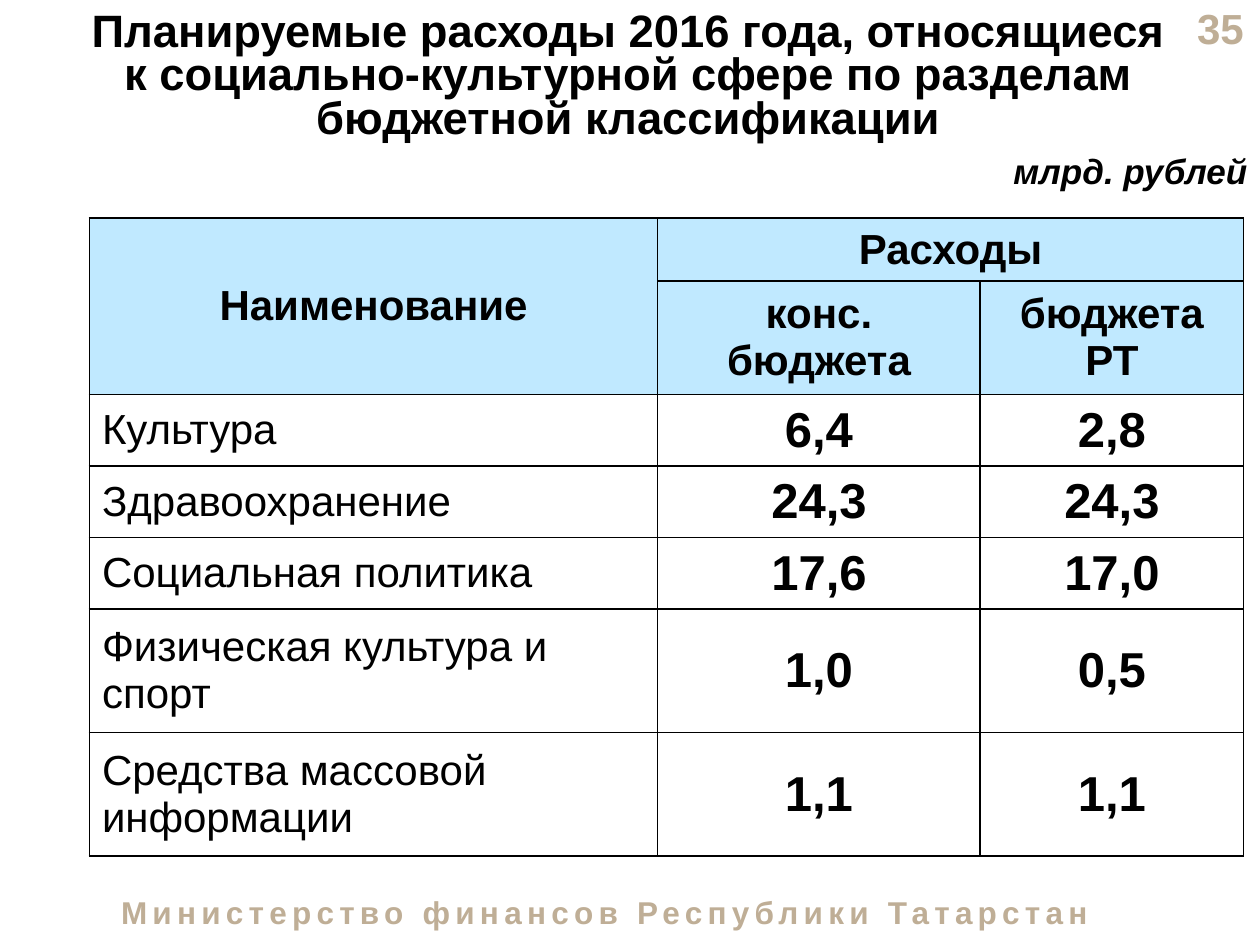
from lxml import etree
from pptx import Presentation
from pptx.dml.color import RGBColor
from pptx.enum.text import MSO_ANCHOR, PP_ALIGN
from pptx.oxml.ns import qn
from pptx.util import Inches, Pt

LEFT, CENTER, RIGHT = PP_ALIGN.LEFT, PP_ALIGN.CENTER, PP_ALIGN.RIGHT
TOP, MIDDLE = MSO_ANCHOR.TOP, MSO_ANCHOR.MIDDLE
BLACK, BEIGE, HEADER_BLUE = "000000", "BFAE96", "C0E9FF"


def write(paragraph, text, size, color=BLACK, bold=True, align=CENTER):
    paragraph.alignment = align
    run = paragraph.add_run()
    run.text = text
    run.font.name = "Arial"
    run.font.size = Pt(size)
    run.font.bold = bold
    run.font.color.rgb = RGBColor.from_string(color)
    return run


def add_text(left, top, width, height, text, size, color, align, anchor=TOP, wrap=True):
    """Add a one-paragraph text box and return its paragraph and run."""
    box = slide.shapes.add_textbox(Inches(left), Inches(top), Inches(width), Inches(height))
    box.text_frame.word_wrap = wrap
    box.text_frame.vertical_anchor = anchor
    paragraph = box.text_frame.paragraphs[0]
    return paragraph, write(paragraph, text, size, color, align=align)


presentation = Presentation()
presentation.slide_width = Inches(10)
presentation.slide_height = Inches(7.5)
slide = presentation.slides.add_slide(presentation.slide_layouts[6])

# Page number and footer
add_text(9.33, 0.05, 0.64, 0.34, "35", 24, BEIGE, RIGHT, MIDDLE)
_, footer_run = add_text(0.56, 7.04, 8.48, 0.4, "Министерство финансов Республики Татарстан",
                         18, BEIGE, CENTER)
footer_run.font._element.set("spc", "300")

# Title
title, _ = add_text(
    0.56, 0.05, 8.85, 1.19,
    "Планируемые расходы 2016 года, относящиеся к социально-культурной сфере "
    "по разделам бюджетной классификации", 25.9, BLACK, CENTER)
title.line_spacing = 0.8

# Spending table
rows = [
    ("Наименование", "Расходы", ""),
    ("", "конс. бюджета", "бюджета РТ"),
    ("Культура", "6,4", "2,8"),
    ("Здравоохранение", "24,3", "24,3"),
    ("Социальная политика", "17,6", "17,0"),
    ("Физическая культура и спорт", "1,0", "0,5"),
    ("Средства массовой информации", "1,1", "1,1"),
]
column_widths = [4.51, 2.56, 2.09]
row_heights = [0.47, 0.84, 0.53, 0.53, 0.53, 0.98, 0.98]
table = slide.shapes.add_table(
    len(rows), len(column_widths), Inches(0.71), Inches(1.73),
    Inches(sum(column_widths)), Inches(sum(row_heights))).table
table.first_row = table.horz_banding = False
for column, width in zip(table.columns, column_widths):
    column.width = Inches(width)
for row, height in zip(table.rows, row_heights):
    row.height = Inches(height)
table.cell(0, 0).merge(table.cell(1, 0))
table.cell(0, 1).merge(table.cell(0, 2))

for row_index, texts in enumerate(rows):
    is_header = row_index < 2
    for column_index, text in enumerate(texts):
        cell = table.cell(row_index, column_index)
        cell.vertical_anchor = MIDDLE
        properties = cell._tc.get_or_add_tcPr()
        for side in ("a:lnL", "a:lnR", "a:lnT", "a:lnB"):
            line = etree.SubElement(properties, qn(side), w=str(Pt(1)))
            fill = etree.SubElement(line, qn("a:solidFill"))
            etree.SubElement(fill, qn("a:srgbClr"), val=BLACK)
        if is_header:
            cell.fill.solid()
            cell.fill.fore_color.rgb = RGBColor.from_string(HEADER_BLUE)
        else:
            cell.fill.background()
        if text:
            is_name = not is_header and column_index == 0
            write(cell.text_frame.paragraphs[0], text,
                  24 if is_header or is_name else 28,
                  bold=not is_name, align=LEFT if is_name else CENTER)

# Unit of measure
_, unit_run = add_text(7.92, 1.14, 2.08, 0.44, "млрд. рублей", 20, BLACK, RIGHT, wrap=False)
unit_run.font.italic = True

presentation.save("out.pptx")
